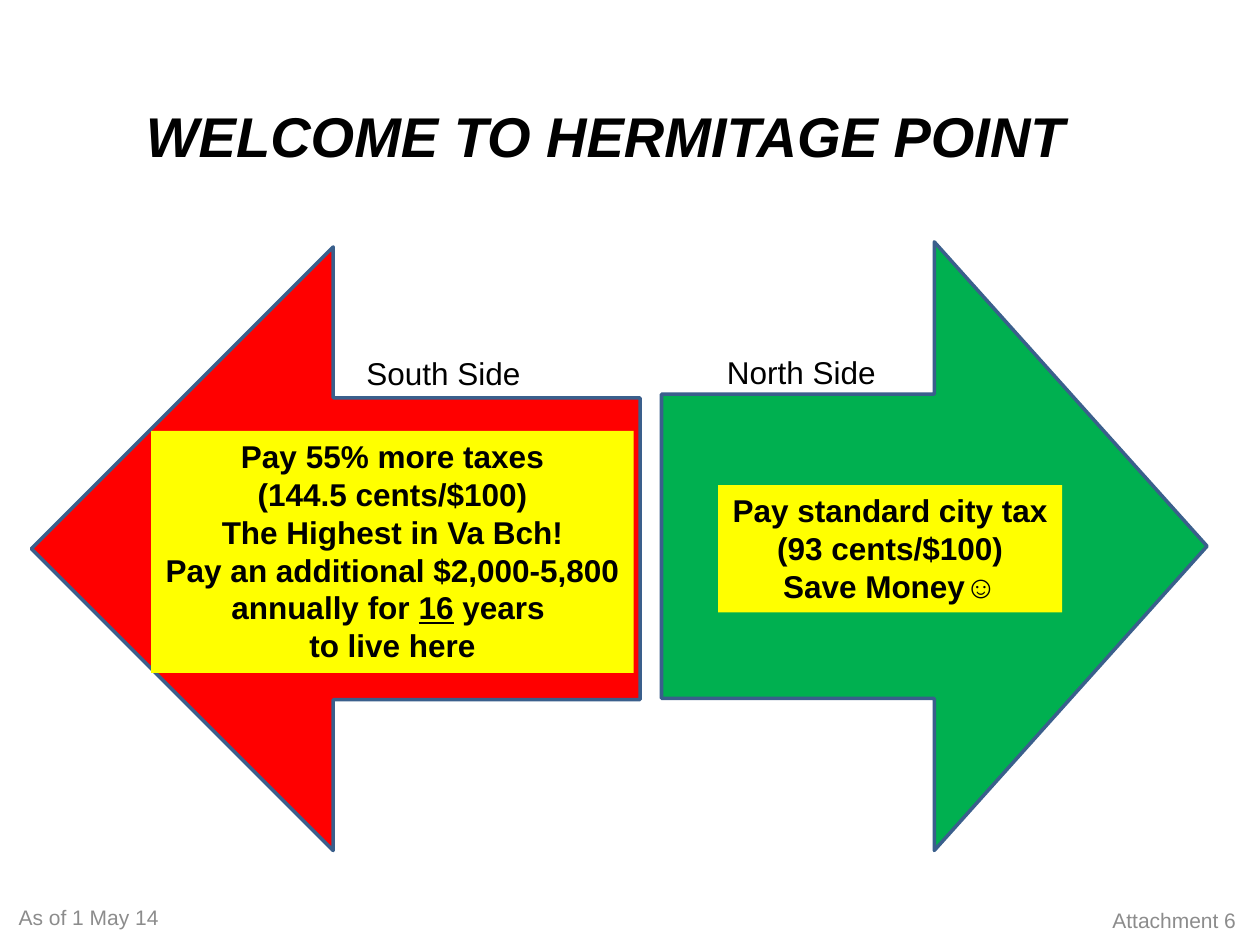
"""Build the Hermitage Point tax comparison slide."""
from pptx import Presentation
from pptx.dml.color import RGBColor
from pptx.enum.shapes import MSO_SHAPE
from pptx.enum.text import MSO_ANCHOR, MSO_AUTO_SIZE, PP_ALIGN
from pptx.util import Inches, Pt


def color(value):
    return RGBColor.from_string(value)


def add_text(page, place, lines, size=18, ink="000000", bold=False, italic=False,
             align=PP_ALIGN.LEFT, fill=None, footer=False):
    box = page.shapes.add_textbox(*[Inches(length) for length in place])
    if fill:
        box.fill.solid()
        box.fill.fore_color.rgb = color(fill)
    frame = box.text_frame
    frame.word_wrap = footer
    frame.auto_size = MSO_AUTO_SIZE.NONE if footer else MSO_AUTO_SIZE.SHAPE_TO_FIT_TEXT
    frame.vertical_anchor = MSO_ANCHOR.MIDDLE if footer else MSO_ANCHOR.TOP
    for index, line in enumerate(lines):
        para = frame.add_paragraph() if index else frame.paragraphs[0]
        para.alignment = align
        for part, underline in line:
            span = para.add_run()
            span.text = part
            span.font.name = "Arial"
            span.font.size = Pt(size)
            span.font.bold = bold
            span.font.italic = italic
            span.font.underline = underline
            span.font.color.rgb = color(ink)


deck = Presentation()
deck.slide_width = Inches(10)
deck.slide_height = Inches(7.5)
page = deck.slides.add_slide(deck.slide_layouts[6])

footers = [
    ((0.05, 7.08, 2.33, 0.4), "As of 1 May 14", PP_ALIGN.LEFT),
    ((7.58, 7.1, 2.33, 0.4), "Attachment 6", PP_ALIGN.RIGHT),
]
for place, words, align in footers:
    add_text(page, place, [[(words, False)]], size=12, ink="8C8C8C", align=align, footer=True)

add_text(page, (1.06, 0.76, 7.56, 0.64), [[("WELCOME TO HERMITAGE POINT", False)]],
         size=32, bold=True, italic=True)

arrows = [
    ((0.27, 1.94, 4.79, 4.83), 270, "FF0000"),
    ((5, 2.17, 4.83, 4.33), 90, "00B050"),
]
for place, rotation, fill in arrows:
    arrow = page.shapes.add_shape(MSO_SHAPE.UP_ARROW, *[Inches(length) for length in place])
    arrow.rotation = rotation
    arrow.shadow.inherit = False
    arrow.fill.solid()
    arrow.fill.fore_color.rgb = color(fill)
    arrow.line.color.rgb = color("3A5F8C")
    arrow.line.width = Pt(2)

south_lines = [
    [("Pay 55% more taxes", False)],
    [("(144.5 cents/$100)", False)],
    [("The Highest in Va Bch!", False)],
    [("Pay an additional $2,000-5,800", False)],
    [("annually for ", False), ("16", True), (" years ", False)],
    [("to live here", False)],
]
north_lines = [
    [("Pay standard city tax", False)],
    [("(93 cents/$100)", False)],
    [("Save Money☺", False)],
]
panels = [
    ((1.2, 3.42, 3.83, 1.92), south_lines),
    ((5.7, 3.85, 2.73, 1.01), north_lines),
]
for place, lines in panels:
    add_text(page, place, lines, bold=True, align=PP_ALIGN.CENTER, fill="FFFF00")

labels = [
    ((5.67, 2.75, 1.39, 0.4), "North Side"),
    ((2.81, 2.76, 1.44, 0.4), "South Side"),
]
for place, words in labels:
    add_text(page, place, [[(words, False)]])

deck.save("out.pptx")
